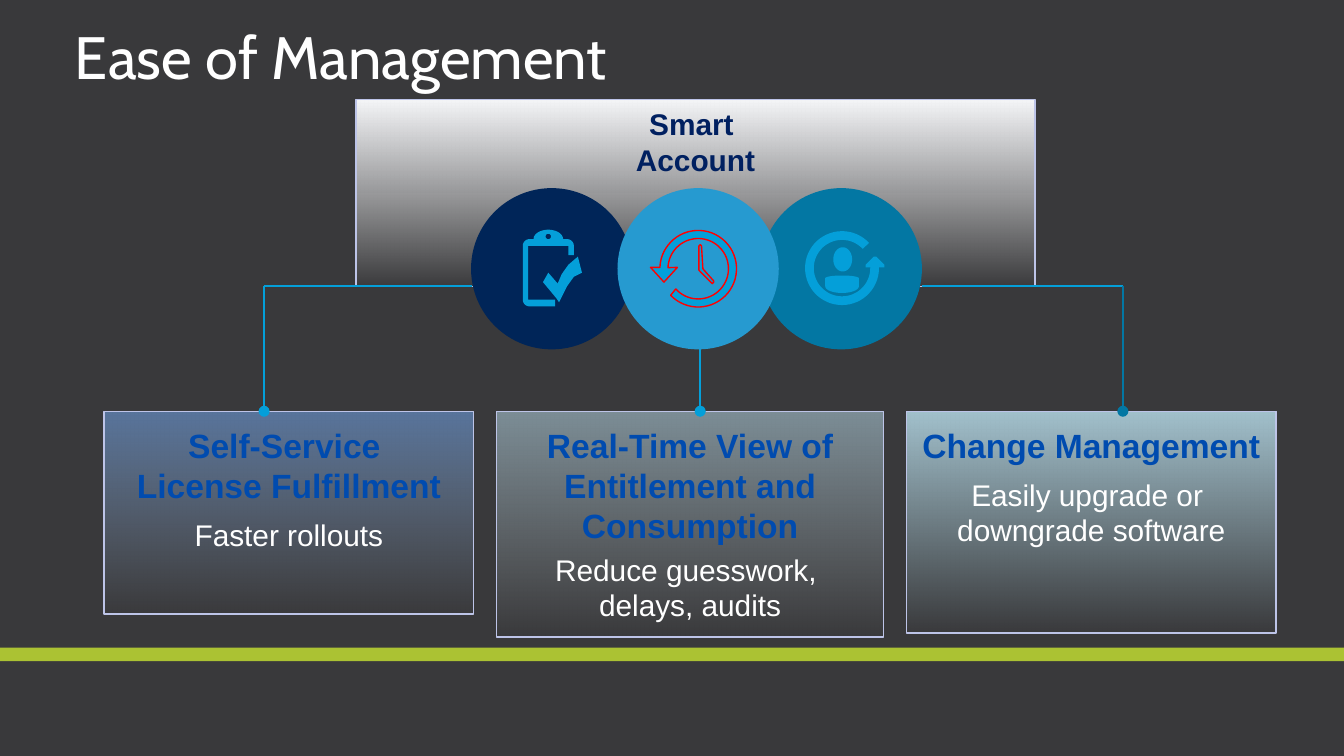
"""Builds the Ease of Management slide on a grid of 100 columns by 56.25 rows."""
from math import cos, radians, sin

from lxml import etree
from pptx import Presentation
from pptx.dml.color import RGBColor
from pptx.enum.shapes import MSO_CONNECTOR, MSO_SHAPE
from pptx.enum.text import MSO_ANCHOR, PP_ALIGN
from pptx.oxml.ns import qn
from pptx.util import Inches, Pt

RECTANGLE, OVAL = MSO_SHAPE.RECTANGLE, MSO_SHAPE.OVAL
STRAIGHT = MSO_CONNECTOR.STRAIGHT
TOP, BOTTOM = MSO_ANCHOR.TOP, MSO_ANCHOR.BOTTOM
CENTER, LEFT = PP_ALIGN.CENTER, PP_ALIGN.LEFT

COLUMNS, ROWS = 100, 56.25
SKY, TEAL, NAVY, BLUE = "049FD9", "0377A3", "002558", "269AD0"
BORDER, HEADING, WHITE = "BDC4E8", "004BAF", "FFFFFF"
CARD_TOP, RAIL, CIRCLE_TOP, DIAMETER = 30.6, 21.3, 14, 12

CARDS = [
    (7.75, 27.5, 15.1, ("79B2FF", 50), ("BCD9FF", 0), 6,
     "Self-Service \nLicense Fulfillment", "Faster rollouts"),
    (36.95, 28.8, 16.8, ("C1E4F4", 50), ("E0F1F9", 0), 3,
     "Real-Time View of Entitlement and Consumption",
     "Reduce guesswork, \ndelays, audits"),
    (67.45, 27.5, 16.5, ("C6EFFE", 75), ("C6EFFE", 0), 6,
     "Change Management", "Easily upgrade or \ndowngrade software"),
]


def grid(count):
    """Turn a number of grid cells into a length."""
    return Inches(count / 10)


def color(code):
    """Turn a hex string into a colour."""
    return RGBColor.from_string(code)


def paint(shape, fill, line=None, width=0.75):
    """Give a shape a flat fill and an optional outline."""
    shape.shadow.inherit = False
    shape.fill.solid()
    shape.fill.fore_color.rgb = color(fill)
    outline(shape, line, width)


def outline(shape, line, width):
    """Set or remove the outline of a shape."""
    if line is None:
        shape.line.fill.background()
    else:
        shape.line.color.rgb = color(line)
        shape.line.width = Pt(width)


def add_flat(page, kind, left, top, width, height, fill):
    """Add a preset shape with a flat fill."""
    shape = page.shapes.add_shape(kind, *map(grid, (left, top, width, height)))
    paint(shape, fill)


def add_fading_box(page, left, top, width, height, *stops):
    """Add an outlined box that fades downwards between two stops."""
    box = page.shapes.add_shape(RECTANGLE, *map(grid, (left, top, width, height)))
    box.shadow.inherit = False
    box.fill.gradient()
    box.fill.gradient_angle = 270
    for stop, (code, _) in zip(box.fill.gradient_stops, stops):
        stop.color.rgb = color(code)
    tints = box._element.spPr.findall(".//" + qn("a:srgbClr"))
    for tint, (_, opacity) in zip(tints, stops):
        etree.SubElement(tint, qn("a:alpha"), val=str(opacity * 1000))
    outline(box, BORDER, 0.75)
    return box


def write(box, paragraphs, font, align=CENTER, anchor=TOP, spacing=None, gap=0, inset=0.05):
    """Write (text, size, colour, bold) paragraphs into a box."""
    frame = box.text_frame
    frame.word_wrap = True
    frame.vertical_anchor = anchor
    frame.margin_top = Inches(inset)
    for index, (text, size, code, bold) in enumerate(paragraphs):
        para = frame.add_paragraph() if index else frame.paragraphs[0]
        para.text = text
        para.alignment = align
        para.line_spacing = spacing
        if index:
            para.space_before = Pt(gap)
        para.font.name, para.font.size, para.font.bold = font, Pt(size), bold
        para.font.color.rgb = color(code)


def add_line(page, start, end, code, dot=False):
    """Add a straight connector, with a dot at its end if asked."""
    line = page.shapes.add_connector(STRAIGHT, *map(grid, start + end))
    line.line.color.rgb = color(code)
    line.line.width = Pt(1.25)
    if dot:
        etree.SubElement(line.line._get_or_add_ln(), qn("a:tailEnd"), type="oval")
    etree.SubElement(line._element.spPr, qn("a:effectLst"))


def arc(center, across, down, start, end):
    """List points along an elliptical arc, clockwise angles in degrees."""
    steps = max(4, round(abs(end - start) / 6))
    angles = [radians(start + (end - start) * step / steps) for step in range(steps + 1)]
    return [(center[0] + across * cos(angle), center[1] + down * sin(angle))
            for angle in angles]


def add_icon(page, contours, line=None):
    """Add one filled outline made of closed contours."""
    scaled = [[(grid(x), grid(y)) for x, y in contour] for contour in contours]
    builder = page.shapes.build_freeform(*scaled[0][0])
    for index, contour in enumerate(scaled):
        if index:
            builder.move_to(*contour[0])
        builder.add_line_segments(contour[1:], close=True)
    paint(builder.convert_to_shape(), SKY, line, 0)


def add_clipboard(page):
    """Draw the clipboard with a check mark."""
    board = [(42.7, 19), (42.3, 19), (42.3, 18.3), (39.3, 18.3), (39.3, 22.3),
             (41.3, 22.3), (41.3, 22.8)]
    board += arc((39.4, 22.3), 0.5, 0.5, 90, 180)
    board += arc((39.4, 18.3), 0.5, 0.5, 180, 270)
    board += arc((40.8, 17.8), 1.1, 0.7, 180, 360)
    board += arc((42.2, 18.3), 0.5, 0.5, 270, 360)
    check = [(43.3, 20.3), (42.7, 20.6), (42.2, 21.3), (41.6, 22.5), (41.4, 22.2),
             (40.4, 21), (40.8, 20.3), (41.5, 21.1), (41.8, 20.4), (42.3, 19.7), (43, 19.1)]
    add_icon(page, [board, arc((40.8, 17.6), 0.2, 0.2, 0, 360), check])


def add_profile(page):
    """Draw the person inside a circling arrow."""
    center = (62.65, 19.95)
    head = arc((62.7, 19.3), 0.7, 0.9, 0, 360)
    body = arc((62.65, 20.7), 1.25, 0.2, 180, 360) + arc((62.65, 21.3), 1.25, 0.5, 0, 180)
    ring = arc(center, 2.75, 2.75, -43, -360)
    ring += [(65.4, 19.9), (65.8, 19.9), (65.8, 19.7), (65.2, 19.1), (65, 19.1),
             (64.4, 19.7), (64.4, 19.9), (64.75, 19.9)]
    ring += arc(center, 2.1, 2.1, -360, -43)
    add_icon(page, [head, body, ring])


def add_clock(page):
    """Draw the clock with a turning arrow and its hands."""
    center = (51.95, 20)
    ring = arc(center, 2.85, 2.85, 182, 496) + arc(center, 2.25, 2.25, 498, 182)
    ring += [(50.4, 19.9), (49.4, 21), (48.4, 19.9)]
    hands = [(52.1, 18.2), (52.2, 18.3), (52.3, 20), (53.1, 20.9), (53.1, 21),
             (53, 21.1), (52.9, 21), (52.1, 20.2), (52, 20.1), (52, 18.3)]
    for contour in (ring, hands):
        add_icon(page, [contour], "FF0000")


def main():
    """Build the slide and save it."""
    deck = Presentation()
    deck.slide_width, deck.slide_height = grid(COLUMNS), grid(ROWS)
    page = deck.slides.add_slide(deck.slide_layouts[6])
    page.background.fill.solid()
    page.background.fill.fore_color.rgb = color("39393B")
    add_flat(page, RECTANGLE, 0, 48.2, COLUMNS, 1, "ABC233")

    title = page.shapes.add_textbox(*map(grid, (4.6, -0.6, 91.3, 8)))
    write(title, [("Ease of Management", 32, WHITE, False)], "Cabin", LEFT, BOTTOM, 0.9)

    account = add_fading_box(page, 26.5, 7.4, 50.5, 13.9, ("F6F7F9", 100), ("FAFBFC", 0))
    write(account, [(text, 16, "002060", True) for text in ("Smart ", "Account")], "Arial")

    for left, width, height, upper, lower, gap, heading, detail in CARDS:
        card = add_fading_box(page, left, CARD_TOP, width, height, upper, lower)
        write(card, [(heading, 18, HEADING, True), (detail, 16, WHITE, False)],
              "Arial", gap=gap, inset=0.1)

    for inner, outer, code in ((35.1, 19.65, SKY), (68.6, 83.55, TEAL)):
        add_line(page, (inner, RAIL), (outer, RAIL), SKY)
        add_line(page, (outer, RAIL), (outer, CARD_TOP), code, dot=True)
    add_line(page, (52.1, 25.6), (52.1, CARD_TOP), SKY, dot=True)

    for left, code, add_symbol in ((35.05, NAVY, add_clipboard), (56.6, TEAL, add_profile),
                                   (45.95, BLUE, add_clock)):
        add_flat(page, OVAL, left, CIRCLE_TOP, DIAMETER, DIAMETER, code)
        add_symbol(page)

    deck.save("out.pptx")


if __name__ == "__main__":
    main()
